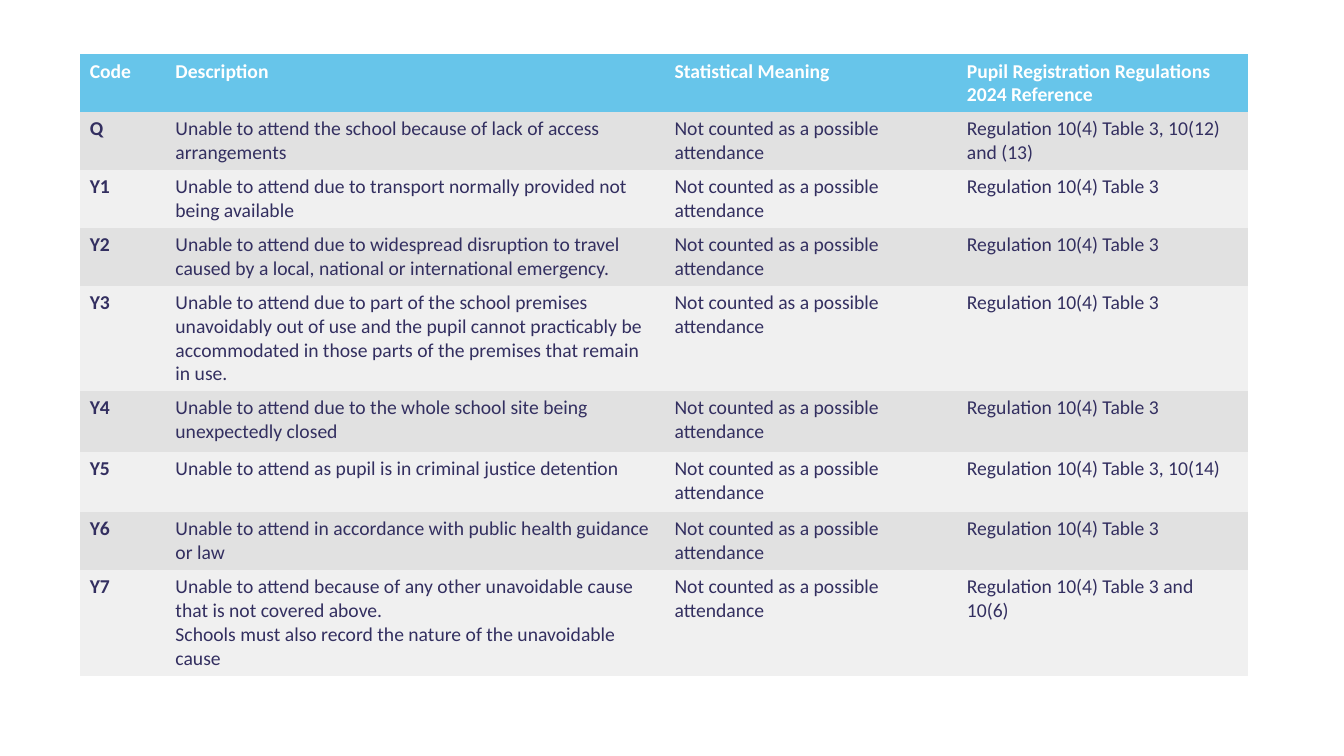
from pptx import Presentation
from pptx.dml.color import RGBColor
from pptx.oxml.ns import qn
from pptx.util import Inches, Pt

BLANK_LAYOUT = 6
NO_STYLE_NO_GRID = "{2D5ABB26-0587-4C30-8999-92F81FD0307C}"
FONT = "Calibri"
COLOURS = {
    "header": "67C5EA",
    "header_text": "FFFFFF",
    "body_text": "332F60",
    "odd_row": "E1E1E1",
    "even_row": "F0F0F0",
}

# Table content: code, description paragraphs, regulation reference
HEADINGS = ["Code", "Description", "Statistical Meaning",
            "Pupil Registration Regulations 2024 Reference"]
MEANING = "Not counted as a possible attendance"
TABLE_3 = "Regulation 10(4) Table 3"
ABSENCE_CODES = [
    ("Q", ["Unable to attend the school because of lack of access arrangements"],
     TABLE_3 + ", 10(12) and (13)"),
    ("Y1", ["Unable to attend due to transport normally provided not being available"],
     TABLE_3),
    ("Y2", ["Unable to attend due to widespread disruption to travel caused by a "
            "local, national or international emergency."], TABLE_3),
    ("Y3", ["Unable to attend due to part of the school premises unavoidably out of "
            "use and the pupil cannot practicably be accommodated in those parts of "
            "the premises that remain in use."], TABLE_3),
    ("Y4", ["Unable to attend due to the whole school site being unexpectedly closed"],
     TABLE_3),
    ("Y5", ["Unable to attend as pupil is in criminal justice detention"],
     TABLE_3 + ", 10(14)"),
    ("Y6", ["Unable to attend in accordance with public health guidance or law"],
     TABLE_3),
    ("Y7", ["Unable to attend because of any other unavoidable cause that is not "
            "covered above.",
            "Schools must also record the nature of the unavoidable cause"],
     TABLE_3 + " and 10(6)"),
]
COLUMN_WIDTHS = [0.85, 4.95, 2.9, 2.89]
ROW_HEIGHTS = [0.57, 0.57, 0.57, 0.57, 1.04, 0.6, 0.6, 0.57, 1.05]


def fill_cell(cell, lines, fill, colour, bold):
    """Write one paragraph per line and colour the cell."""
    cell.fill.solid()
    cell.fill.fore_color.rgb = RGBColor.from_string(COLOURS[fill])
    frame = cell.text_frame
    for number, line in enumerate(lines):
        paragraph = frame.add_paragraph() if number else frame.paragraphs[0]
        run = paragraph.add_run()
        run.text = line
        run.font.name = FONT
        run.font.size = Pt(14)
        run.font.bold = bold
        run.font.color.rgb = RGBColor.from_string(COLOURS[colour])


def add_code_table(slide):
    """Add the empty grid with its column widths and row heights."""
    frame = slide.shapes.add_table(
        len(ROW_HEIGHTS), len(COLUMN_WIDTHS), Inches(0.79), Inches(0.54),
        Inches(sum(COLUMN_WIDTHS)), Inches(sum(ROW_HEIGHTS)))
    codes_table = frame.table
    codes_table._tbl.tblPr.find(qn("a:tableStyleId")).text = NO_STYLE_NO_GRID
    for column, width in zip(codes_table.columns, COLUMN_WIDTHS):
        column.width = Inches(width)
    for row, height in zip(codes_table.rows, ROW_HEIGHTS):
        row.height = Inches(height)
    return codes_table


def main():
    prs = Presentation()
    prs.slide_width = Inches(13.33)
    prs.slide_height = Inches(7.5)
    slide = prs.slides.add_slide(prs.slide_layouts[BLANK_LAYOUT])
    codes_table = add_code_table(slide)

    # Header row
    for column, heading in enumerate(HEADINGS):
        fill_cell(codes_table.cell(0, column), [heading], "header", "header_text", True)

    # Absence codes in alternating bands
    for row, (code, description, reference) in enumerate(ABSENCE_CODES, start=1):
        band = "odd_row" if row % 2 else "even_row"
        for column, lines in enumerate([[code], description, [MEANING], [reference]]):
            fill_cell(codes_table.cell(row, column), lines, band, "body_text",
                      column == 0)

    prs.save("out.pptx")


if __name__ == "__main__":
    main()
